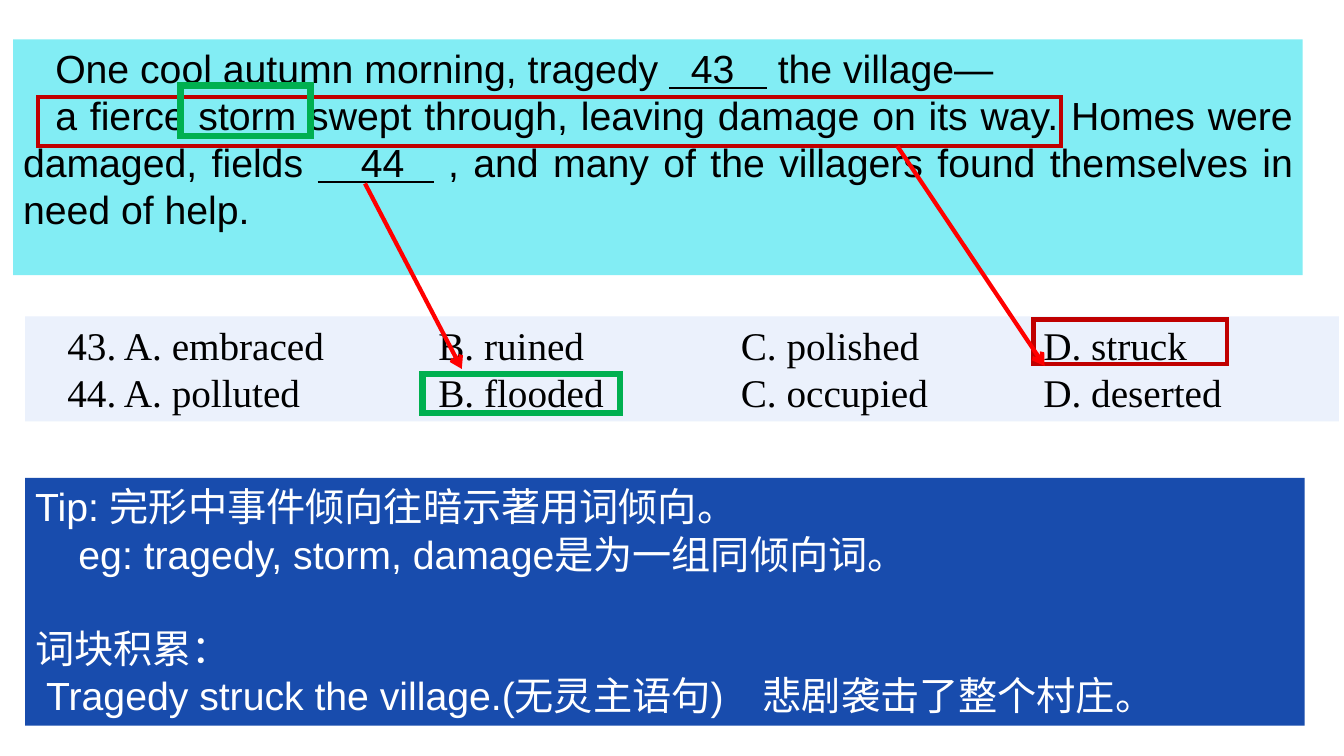
from lxml import etree
from pptx import Presentation
from pptx.dml.color import RGBColor
from pptx.enum.shapes import MSO_CONNECTOR, MSO_SHAPE
from pptx.enum.text import MSO_ANCHOR, PP_ALIGN
from pptx.oxml.ns import qn
from pptx.util import Emu, Pt

RECTANGLE = MSO_SHAPE.RECTANGLE
STRAIGHT = MSO_CONNECTOR.STRAIGHT
TOP = MSO_ANCHOR.TOP
LEFT, JUSTIFY = PP_ALIGN.LEFT, PP_ALIGN.JUSTIFY

CYAN = RGBColor(0x82, 0xED, 0xF4)
PALE_BLUE = RGBColor(0xEB, 0xF1, 0xFC)
BLUE = RGBColor(0x18, 0x4C, 0xAD)
DARK_RED = RGBColor(0xC0, 0x00, 0x00)
RED = RGBColor(0xFF, 0x00, 0x00)
GREEN = RGBColor(0x00, 0xB0, 0x50)
BLACK = RGBColor(0x00, 0x00, 0x00)
WHITE = RGBColor(0xFF, 0xFF, 0xFF)

EMU_PER_PX = 9144  # 100 px to the inch
TEXT_SIZE = Pt(28)
FIRST_LINE = 32
TAB_STEP = 100
LINE_GAP = Pt(33.6)

# Content: paragraphs are (first-line indent, space before, runs);
# a run is (text, underlined)
PASSAGE = [
    (FIRST_LINE, 0, [("One cool autumn morning, tragedy ", False),
                     ("  43   ", True),
                     (" the village—", False)]),
    (FIRST_LINE, 0, [("a fierce storm swept through, leaving damage on its way. "
                      "Homes were damaged, fields ", False),
                     ("   44  ", True),
                     (" , and many of the villagers found themselves in need of help.",
                      False)]),
]
CHOICES = [
    ("43. A. embraced", "B. ruined", "C. polished", "D. struck"),
    ("44. A. polluted", "B. flooded", "C. occupied", "D. deserted"),
]
TIP = [
    (0, 0, [("Tip: 完形中事件倾向往暗示著用词倾向。", False)]),
    (43, 0, [("eg: tragedy, storm, damage是为一组同倾向词。", False)]),
    (0, LINE_GAP, [("词块积累：", False)]),
    (11, 0, [("Tragedy struck the village.(无灵主语句)　悲剧袭击了整个村庄。", False)]),
]
# Two tab steps carry every choice to the next column, three steps apart
CHOICE_LINES = [(FIRST_LINE, 0, [("\t\t".join(row), False)]) for row in CHOICES]

# Panels: box, fill, font, text colour, alignment, paragraphs
PANELS = [
    ((13, 39, 1279, 234), CYAN, "Arial", BLACK, JUSTIFY, PASSAGE),
    ((25, 314, 1303, 104), PALE_BLUE, "Times New Roman", BLACK, JUSTIFY, CHOICE_LINES),
    ((25, 474, 1269, 246), BLUE, "Arial", WHITE, LEFT, TIP),
]
# Frames: box, colour, line width in points
FRAMES = [
    ((38, 96, 1014, 49), DARK_RED, 3),
    ((419, 371, 196, 39), GREEN, 4.5),
    ((179, 85, 129, 50), GREEN, 4.5),
    ((1025, 317, 192, 44), DARK_RED, 3),
]
# Arrows from the clue to the answer
ARROWS = [(890, 145, 1036, 363), (362, 182, 458, 366)]


def px(*lengths):
    return [Emu(length * EMU_PER_PX) for length in lengths]


def set_tab_step(*roots):
    for root in roots:
        for style in root.iter():
            if style.get("defTabSz"):
                style.set("defTabSz", str(TAB_STEP * EMU_PER_PX))


def add_rectangle(slide, box):
    shape = slide.shapes.add_shape(RECTANGLE, *px(*box))
    shape.shadow.inherit = False
    return shape


def add_panel(slide, box, fill, font_name, colour, alignment, paragraphs):
    shape = add_rectangle(slide, box)
    shape.fill.solid()
    shape.fill.fore_color.rgb = fill
    shape.line.fill.background()
    frame = shape.text_frame
    frame.word_wrap = True
    frame.vertical_anchor = TOP
    for index, (indent, space_before, runs) in enumerate(paragraphs):
        paragraph = frame.add_paragraph() if index else frame.paragraphs[0]
        properties = paragraph._p.get_or_add_pPr()
        properties.set("marL", "0")
        properties.set("indent", str(indent * EMU_PER_PX))
        properties.set("defTabSz", str(TAB_STEP * EMU_PER_PX))
        paragraph.alignment = alignment
        if space_before:
            paragraph.space_before = space_before
        for text, underlined in runs:
            run = paragraph.add_run()
            run.text = text
            run.font.name = font_name
            run.font.size = TEXT_SIZE
            run.font.color.rgb = colour
            if underlined:
                run.font.underline = True


def add_frame(slide, box, colour, width):
    shape = add_rectangle(slide, box)
    shape.fill.background()
    shape.line.color.rgb = colour
    shape.line.width = Pt(width)
    etree.SubElement(shape.line._get_or_add_ln(), qn("a:miter"), lim="800000")


def add_arrow(slide, ends):
    connector = slide.shapes.add_connector(STRAIGHT, *px(*ends))
    connector.line.color.rgb = RED
    connector.line.width = Pt(3)
    etree.SubElement(connector.line._get_or_add_ln(), qn("a:tailEnd"), type="arrow")
    etree.SubElement(connector._element.spPr, qn("a:effectLst"))


def main():
    presentation = Presentation()
    presentation.slide_width, presentation.slide_height = px(1333, 750)
    set_tab_step(presentation.element, presentation.slide_master.element)
    slide = presentation.slides.add_slide(presentation.slide_layouts[6])
    for panel in PANELS:
        add_panel(slide, *panel)
    for frame in FRAMES:
        add_frame(slide, *frame)
    for ends in ARROWS:
        add_arrow(slide, ends)
    presentation.save("out.pptx")


if __name__ == "__main__":
    main()
